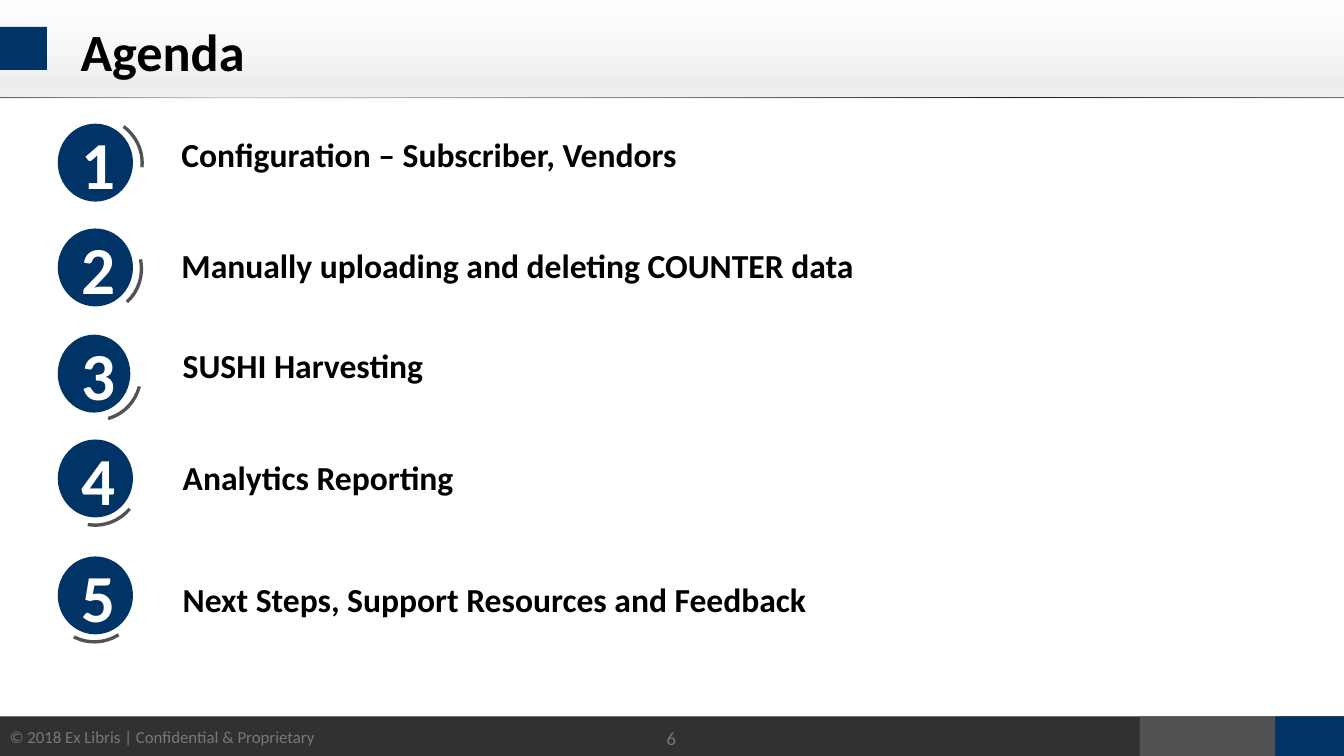
"""Build the agenda slide with numbered badges."""
import pptx
import pptx.dml.color
import pptx.enum.shapes
import pptx.enum.text
import pptx.oxml
import pptx.oxml.ns
import pptx.util

Inches = pptx.util.Inches
MSO_SHAPE = pptx.enum.shapes.MSO_SHAPE
PP_ALIGN = pptx.enum.text.PP_ALIGN

COLORS = {
    "navy": "003466",
    "charcoal": "313133",
    "gray": "525254",
    "muted": "787878",
    "white": "FFFFFF",
    "black": "000000",
}
HEADER_STOPS = [(0, "FAFAFA", 12), (66, "D7D7D7", 30), (83, "D7D7D7", 47), (100, "E4E4E4", 54)]
RULE_STOPS = [(0, "606060", 100), (17, "D0D0D0", 100), (50, "808080", 100),
              (75, "202020", 100), (100, "707070", 100)]
AGENDA = [
    ("Configuration – Subscriber, Vendors", 0.88, 0.56, 5.1, 1.3, 0.92, 3.94),
    ("Manually uploading and deleting COUNTER data", 1.66, 0.56, 47, 1.3, 1.74, 5.12),
    ("SUSHI Harvesting", 2.45, 0.54, 73.5, 1.31, 2.49, 3.94),
    ("Analytics Reporting", 3.23, 0.56, 98.8, 1.31, 3.32, 3.94),
    ("Next Steps, Support Resources and Feedback", 4.1, 0.56, 116.7, 1.31, 4.23, 4.87),
]


def rgb(name):
    return pptx.dml.color.RGBColor.from_string(COLORS[name])


def write_text(shape, text, size, color="black", bold=False, align=PP_ALIGN.LEFT, wrap=True, inset=None):
    frame = shape.text_frame
    frame.word_wrap = wrap
    frame.auto_size = pptx.enum.text.MSO_AUTO_SIZE.NONE
    frame.vertical_anchor = pptx.enum.text.MSO_ANCHOR.MIDDLE
    if inset is not None:
        frame.margin_left = frame.margin_right = Inches(inset)
        frame.margin_top = frame.margin_bottom = Inches(inset)
    paragraph = frame.paragraphs[0]
    paragraph.alignment = align
    run = paragraph.add_run()
    run.text = text
    run.font.name = "Calibri"
    run.font.size = pptx.util.Pt(size)
    run.font.bold = bold
    run.font.color.rgb = rgb(color)


def add_text(slide, box, text, **text_format):
    shape = slide.shapes.add_textbox(*map(Inches, box))
    write_text(shape, text, **text_format)


def add_filled(shapes, kind, box, color):
    shape = shapes.add_shape(kind, *map(Inches, box))
    shape.shadow.inherit = False
    shape.fill.solid()
    shape.fill.fore_color.rgb = rgb(color)
    shape.line.fill.background()
    return shape


def add_gradient_bar(slide, box, stops, angle):
    shape = add_filled(slide.shapes, MSO_SHAPE.RECTANGLE, box, "white")
    stop_xml = "".join(
        f'<a:gs pos="{position * 1000}"><a:srgbClr val="{color}">'
        f'<a:alpha val="{opacity * 1000}"/></a:srgbClr></a:gs>'
        for position, color, opacity in stops
    )
    gradient = pptx.oxml.parse_xml(
        f'<a:gradFill {pptx.oxml.ns.nsdecls("a")}><a:gsLst>{stop_xml}</a:gsLst>'
        f'<a:lin ang="{angle * 60000}" scaled="0"/></a:gradFill>'
    )
    solid = shape.element.spPr.find(pptx.oxml.ns.qn("a:solidFill"))
    shape.element.spPr.replace(solid, gradient)


def add_badge(slide, number, top, width, rotation):
    shapes = slide.shapes.add_group_shape().shapes
    add_filled(shapes, MSO_SHAPE.OVAL, (0.38, top, 0.65, 0.66), "white")
    arc = add_filled(shapes, MSO_SHAPE.BLOCK_ARC, (0.35, top - 0.02, 0.72, 0.7), "gray")
    for index, value in enumerate((181.725, 0.424, 0.035)):
        arc.adjustments[index] = value
    arc.rotation = rotation
    circle = add_filled(shapes, MSO_SHAPE.OVAL, (0.43, top + 0.04, width, 0.58), "navy")
    write_text(circle, str(number), size=36, color="white", bold=True, align=PP_ALIGN.CENTER)


def add_frame(slide):
    for left, width, color in ((0, 10, "charcoal"), (8.48, 1.01, "gray"), (9.49, 0.51, "navy")):
        add_filled(slide.shapes, MSO_SHAPE.RECTANGLE, (left, 5.33, width, 0.32), color)
    add_text(slide, (-0.04, 5.36, 2.49, 0.25), "© 2018 Ex Libris | Confidential & Proprietary",
             size=9, color="muted", align=PP_ALIGN.CENTER, wrap=False)
    add_text(slide, (4.7, 5.29, 0.59, 0.4), "6", size=10, color="muted", align=PP_ALIGN.CENTER)
    add_gradient_bar(slide, (-0.01, 0.01, 10.01, 0.72), HEADER_STOPS, 90)
    add_filled(slide.shapes, MSO_SHAPE.RECTANGLE, (0, 0.2, 0.35, 0.32), "navy")
    add_gradient_bar(slide, (0, 0.72, 10, 0.01), RULE_STOPS, 0)


def add_title(slide, text):
    title = slide.shapes.title
    title.left, title.top, title.width, title.height = map(Inches, (0.5, 0.06, 9.07, 0.63))
    write_text(title, text, size=28, bold=True)
    title.element.getparent().append(title.element)


def main():
    presentation = pptx.Presentation()
    presentation.slide_width = Inches(10)
    presentation.slide_height = Inches(10) * 9 // 16
    slide = presentation.slides.add_slide(presentation.slide_layouts[5])
    add_frame(slide)
    add_title(slide, "Agenda")
    for number, item in enumerate(AGENDA, start=1):
        text, badge_top, badge_width, rotation, left, top, width = item
        add_badge(slide, number, badge_top, badge_width, rotation)
        add_text(slide, (left, top, width, 0.46), text, size=18, bold=True, inset=0.05)
    presentation.save("out.pptx")


if __name__ == "__main__":
    main()
